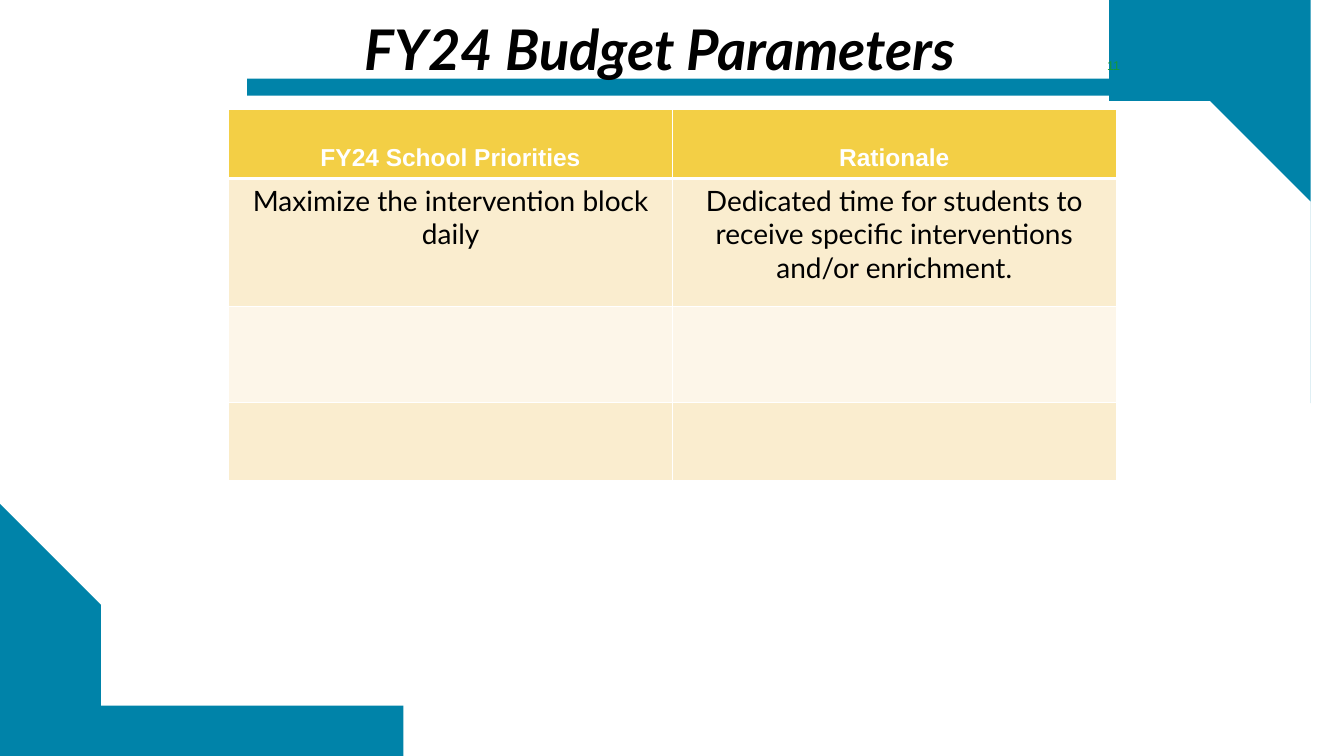
import math
from lxml import etree
from pptx import Presentation
from pptx import util as u
from pptx.dml import color
from pptx.enum import shapes, text
from pptx.oxml import ns

TEAL = "0083A9"
WHITE = "FFFFFF"
BLACK = "000000"


def paint(fill, hex_color):
    fill.solid()
    fill.fore_color.rgb = color.RGBColor.from_string(hex_color)


def add_run(paragraph, words, font_name, size, hex_color, bold=False, italic=False):
    paragraph.alignment = text.PP_ALIGN.CENTER
    run = paragraph.add_run()
    run.text = words
    run.font.name = font_name
    run.font.size = u.Pt(size)
    run.font.bold = bold
    run.font.italic = italic
    paint(run.font.fill, hex_color)


presentation = Presentation()
presentation.slide_width = u.Inches(13.33)
presentation.slide_height = u.Inches(7.5)
slide = presentation.slides.add_slide(presentation.slide_layouts[5])

# Corners: the area between a quarter circle and the slide's corner
radius = 3.95
steps = 60
corners = [
    # circle centre, start angle in degrees, slide corner
    ((9.38, 3.95), -90, (13.33, 0)),
    ((3.95, 3.55), 90, (0, 7.5)),
]
for (center_x, center_y), start, corner in corners:
    arc = []
    for step in range(steps + 1):
        angle = math.radians(start + 90 * step / steps)
        arc.append((center_x + radius * math.cos(angle),
                    center_y + radius * math.sin(angle)))
    builder = slide.shapes.build_freeform(*arc[0], scale=u.Inches(1))
    builder.add_line_segments(arc[1:] + [corner], close=True)
    shape = builder.convert_to_shape()
    shape.shadow.inherit = False
    paint(shape.fill, TEAL)
    shape.line.fill.background()

# Bar under the title
bar = slide.shapes.add_shape(shapes.MSO_SHAPE.RECTANGLE, u.Inches(2.45),
                             u.Inches(0.78), u.Inches(9.19), u.Inches(0.17))
bar.shadow.inherit = False
paint(bar.fill, TEAL)
bar.line.fill.background()

# Title, brought in front of the bar
title = slide.shapes.title
bar.element.addnext(title.element)
title.left, title.top = u.Inches(3.05), u.Inches(0.09)
title.width, title.height = u.Inches(6.99), u.Inches(0.77)
title.text_frame.auto_size = text.MSO_AUTO_SIZE.NONE
title.text_frame.vertical_anchor = text.MSO_ANCHOR.TOP
add_run(title.text_frame.paragraphs[0], "FY24 Budget Parameters",
        "Lato", 40, BLACK, bold=True, italic=True)

# Priorities table
rows = [
    ("FY24 School Priorities", "Rationale"),
    ("Maximize the intervention block daily",
     "Dedicated time for students to receive specific interventions and/or enrichment."),
    ("", ""),
    ("", ""),
]
row_heights = [0.68, 1.27, 0.95, 0.78]
row_fills = ["F3CF45", "FAEDCF", "FDF6E9", "FAEDCF"]
table = slide.shapes.add_table(len(rows), 2, u.Inches(2.27), u.Inches(1.09),
                               u.Inches(8.8), u.Inches(sum(row_heights))).table
for row_index, row in enumerate(rows):
    table.rows[row_index].height = u.Inches(row_heights[row_index])
    for column_index, words in enumerate(row):
        cell = table.cell(row_index, column_index)

        # White borders, thicker between header and body
        properties = cell._tc.get_or_add_tcPr()
        for side in ("lnL", "lnR", "lnT", "lnB"):
            thick = (row_index, side) in ((0, "lnB"), (1, "lnT"))
            line = etree.SubElement(properties, ns.qn("a:" + side),
                                    w=str(u.Pt(3 if thick else 1)))
            solid = etree.SubElement(line, ns.qn("a:solidFill"))
            etree.SubElement(solid, ns.qn("a:srgbClr"), val=WHITE)
        paint(cell.fill, row_fills[row_index])

        paragraph = cell.text_frame.paragraphs[0]
        if row_index == 0:
            cell.vertical_anchor = text.MSO_ANCHOR.BOTTOM
            cell.margin_bottom = u.Inches(0.07)
            add_run(paragraph, words, "Arial", 17.5, WHITE, bold=True)
        elif words:
            add_run(paragraph, words, "Lato", 20, BLACK)

# Slide number
number = slide.shapes.add_textbox(u.Inches(10.64), u.Inches(0.5),
                                  u.Inches(0.81), u.Inches(0.3))
number.text_frame.word_wrap = True
number.text_frame.vertical_anchor = text.MSO_ANCHOR.MIDDLE
add_run(number.text_frame.paragraphs[0], "11", "Arial", 9, "159839")

presentation.save("out.pptx")
